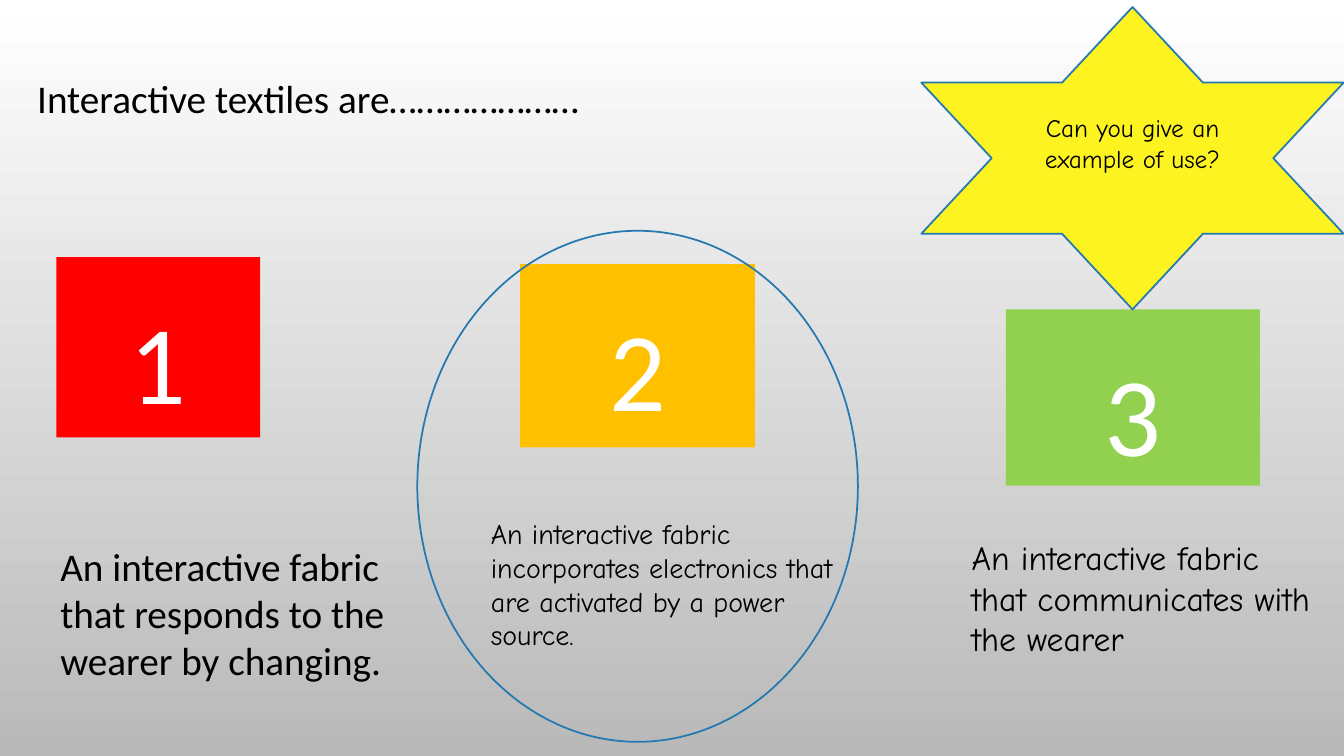
"""Build a slide with three definitions of interactive textiles."""
from dataclasses import dataclass

from pptx import Presentation
from pptx.dml.color import RGBColor
from pptx.enum.shapes import MSO_SHAPE
from pptx.enum.text import MSO_ANCHOR, PP_ALIGN
from pptx.util import Inches, Pt


@dataclass(frozen=True)
class Theme:
    ink: str = "000000"
    paper: str = "FFFFFF"
    shade: str = "B9B9B9"
    outline: str = "2379B0"
    star: str = "FDF321"
    red: str = "FF0000"
    amber: str = "FFC000"
    green: str = "92D050"
    plain: str = "Calibri"
    hand: str = "Comic Neue"
    number_size: int = 80
    large: int = 28
    medium: int = 24
    normal: int = 20
    small: int = 18
    line_width: float = 1.25


THEME = Theme()
SLIDE_SIZE = (13.33, 7.5)
SKIPPED_LINE = 0.3
MARGIN = 0.05

# Places are left, top, width and height in percent of the slide.
NUMBERS = [
    ("1", THEME.red, (4.2, 34, 15.15, 23.87)),
    ("2", THEME.amber, (38.7, 34.93, 17.48, 24.27)),
    ("3", THEME.green, (74.85, 40.93, 18.9, 23.33)),
]
TITLE = (["Interactive textiles are…………………"], THEME.plain, THEME.large, (2.03, 9.2, 52.7, 7.6))
DEFINITIONS = [
    (["An interactive fabric incorporates electronics that are activated by a power source."],
     THEME.hand, THEME.normal, (35.78, 67.73, 27.3, 19.33)),
    (["An interactive fabric", "that responds to the", "wearer by changing."],
     THEME.plain, THEME.large, (3.75, 71.07, 27.3, 20.13)),
    (["An interactive fabric that communicates with the wearer"],
     THEME.hand, THEME.medium, (71.55, 70.4, 27.3, 17.47)),
]
RING_PLACE = (31.05, 30.53, 32.78, 67.6)
STAR_PLACE = (68.55, 0.93, 31.43, 40)
QUESTION = "Can you give an example of use?"


def color(value):
    return RGBColor.from_string(value)


def box(place):
    return [Inches(share * SLIDE_SIZE[index % 2] / 100) for index, share in enumerate(place)]


def set_all(target, values):
    for name, value in values.items():
        setattr(target, name, value)


def write(shape, lines, font, size, ink=THEME.ink, align=PP_ALIGN.LEFT, **frame_format):
    frame = shape.text_frame
    set_all(frame, {"word_wrap": True, "vertical_anchor": MSO_ANCHOR.TOP, **frame_format})
    frame.text = "\n".join(lines)
    for paragraph in frame.paragraphs:
        paragraph.alignment = align
        set_all(paragraph.font, {"name": font, "size": Pt(size)})
        paragraph.font.color.rgb = color(ink)


def add_figure(slide, preset, place, fill=None, outline=None):
    shape = slide.shapes.add_shape(preset, *box(place))
    shape.shadow.inherit = False
    if fill:
        shape.fill.solid()
        shape.fill.fore_color.rgb = color(fill)
    else:
        shape.fill.background()
    if outline:
        shape.line.color.rgb = color(outline)
        shape.line.width = Pt(THEME.line_width)
    else:
        shape.line.fill.background()
    return shape


def add_text(slide, lines, font, size, place):
    write(slide.shapes.add_textbox(*box(place)), lines, font, size)


def paint_background(slide):
    fill = slide.background.fill
    fill.gradient()
    fill.gradient_angle = 270
    for stop, value in zip(fill.gradient_stops, (THEME.paper, THEME.shade)):
        stop.color.rgb = color(value)


def main():
    presentation = Presentation()
    presentation.slide_width, presentation.slide_height = map(Inches, SLIDE_SIZE)
    slide = presentation.slides.add_slide(presentation.slide_layouts[6])
    paint_background(slide)
    for number, fill, place in NUMBERS:
        square = add_figure(slide, MSO_SHAPE.RECTANGLE, place, fill)
        write(square, [number], THEME.plain, THEME.number_size, THEME.paper, PP_ALIGN.CENTER,
              margin_top=Inches(MARGIN + SKIPPED_LINE))
    add_text(slide, *TITLE)
    add_figure(slide, MSO_SHAPE.OVAL, RING_PLACE, outline=THEME.outline)
    star = add_figure(slide, MSO_SHAPE.STAR_6_POINT, STAR_PLACE, THEME.star, THEME.outline)
    write(star, [QUESTION], THEME.hand, THEME.small, align=PP_ALIGN.CENTER,
          vertical_anchor=MSO_ANCHOR.MIDDLE, margin_bottom=Inches(MARGIN + SKIPPED_LINE))
    for definition in DEFINITIONS:
        add_text(slide, *definition)
    presentation.save("out.pptx")


if __name__ == "__main__":
    main()
